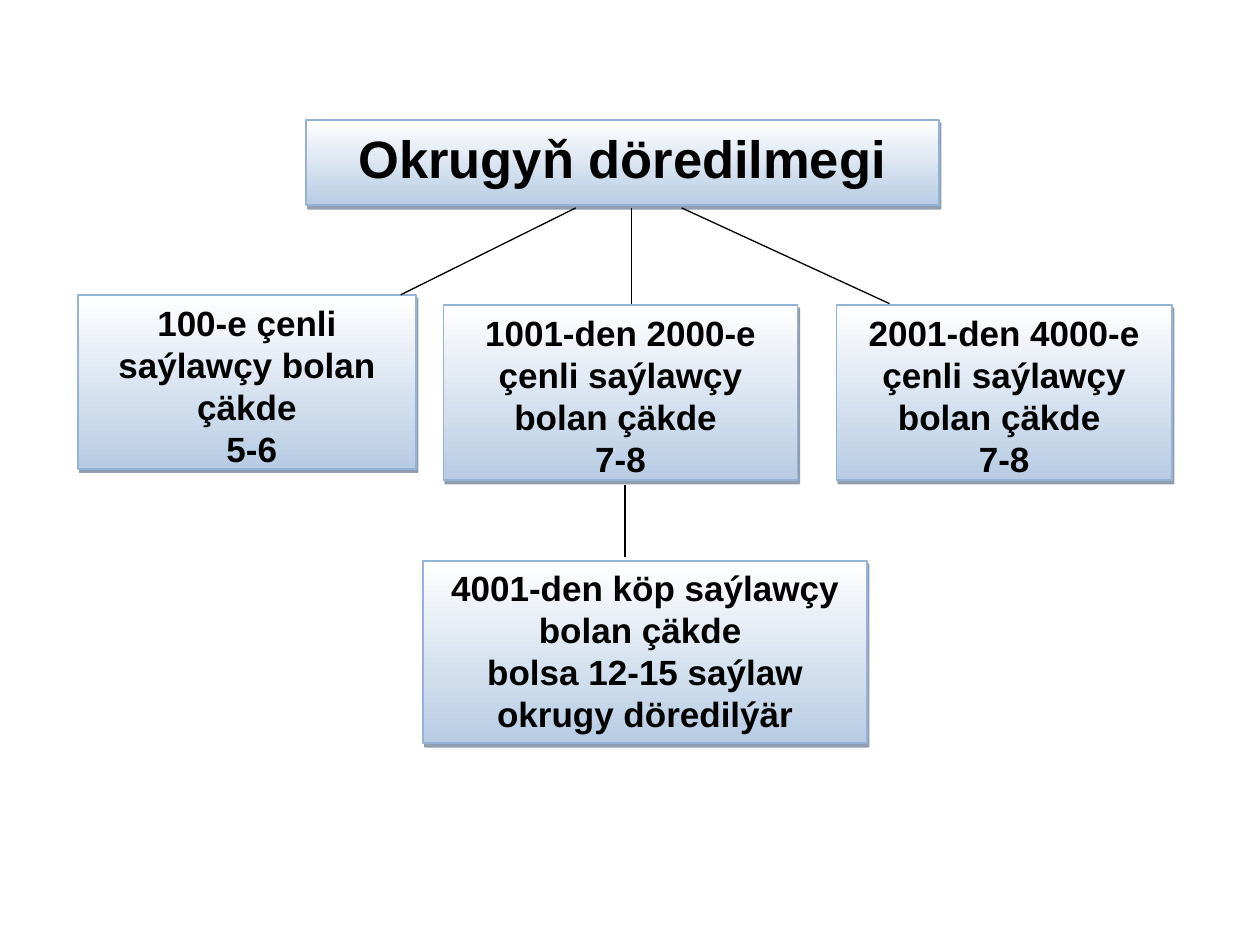
from lxml import etree
from pptx import Presentation
from pptx.dml.color import RGBColor
from pptx.enum import shapes, text
from pptx.oxml.ns import qn
from pptx.util import Inches, Pt


def color(code):
    return RGBColor.from_string(code)


def write(shape, lines, size=20, font="Arial", ink="000000", bold=True):
    frame = shape.text_frame
    frame.word_wrap = True
    frame.vertical_anchor = text.MSO_ANCHOR.TOP
    for i, line in enumerate(lines):
        para = frame.paragraphs[0] if i == 0 else frame.add_paragraph()
        para.alignment = text.PP_ALIGN.CENTER
        run = para.add_run()
        run.text = line
        run.font.name, run.font.size, run.font.bold = font, Pt(size), bold
        run.font.color.rgb = color(ink)


def cast(shape, code, dist, angle):
    """Give the shape a hard, half-transparent shadow."""
    shape.shadow.inherit = False
    effects = shape._element.spPr.find(qn("a:effectLst"))
    outer = etree.SubElement(effects, qn("a:outerShdw"), dist=str(Pt(dist)),
                             dir=str(angle * 60000), algn="ctr",
                             rotWithShape="0")
    tint = etree.SubElement(outer, qn("a:srgbClr"), val=code)
    etree.SubElement(tint, qn("a:alpha"), val="50000")


def panel(slide, box, lines, **style):
    shape = slide.shapes.add_shape(shapes.MSO_SHAPE.RECTANGLE,
                                   *map(Inches, box))
    shape.fill.gradient()
    shape.fill.gradient_angle = 270
    for stop, code in zip(shape.fill.gradient_stops, ("FFFFFF", "B8CCE4")):
        stop.color.rgb = color(code)
    shape.line.color.rgb = color("95B3D7")
    shape.line.width = Pt(1)
    cast(shape, "243F60", 2.2, 63)
    write(shape, lines, **style)


def link(slide, *ends):
    line = slide.shapes.add_connector(shapes.MSO_CONNECTOR.STRAIGHT,
                                      *map(Inches, ends))
    line.line.color.rgb = color("000000")
    line.line.width = Pt(0.75)
    etree.SubElement(line._element.spPr, qn("a:effectLst"))


def chart(slide):
    panel(slide, (2.43, 0.95, 5.02, 0.68), ["Okrugyň döredilmegi"], size=30)
    cases = [
        ((0.62, 2.34, 2.68, 1.38),
         ["100-e çenli saýlawçy bolan çäkde", " 5-6"]),
        ((3.52, 2.42, 2.81, 1.39),
         ["1001-den 2000-e çenli saýlawçy bolan çäkde ", "7-8"]),
        ((6.64, 2.42, 2.66, 1.39),
         ["2001-den 4000-e çenli saýlawçy bolan çäkde ", "7-8"]),
        ((3.36, 4.45, 3.52, 1.45),
         ["4001-den köp saýlawçy bolan çäkde ",
          "bolsa 12-15 saýlaw okrugy döredilýär"]),
    ]
    for box, lines in cases:
        panel(slide, box, lines)
    for ends in [(5.01, 1.65, 5.01, 2.41), (4.57, 1.65, 3.18, 2.34),
                 (7.06, 2.41, 5.41, 1.65), (4.96, 3.85, 4.96, 4.42)]:
        link(slide, *ends)


def main():
    deck = Presentation()
    deck.slide_width, deck.slide_height = Inches(10), Inches(7.5)
    chart(deck.slides.add_slide(deck.slide_layouts[6]))
    deck.save("out.pptx")


if __name__ == "__main__":
    main()
